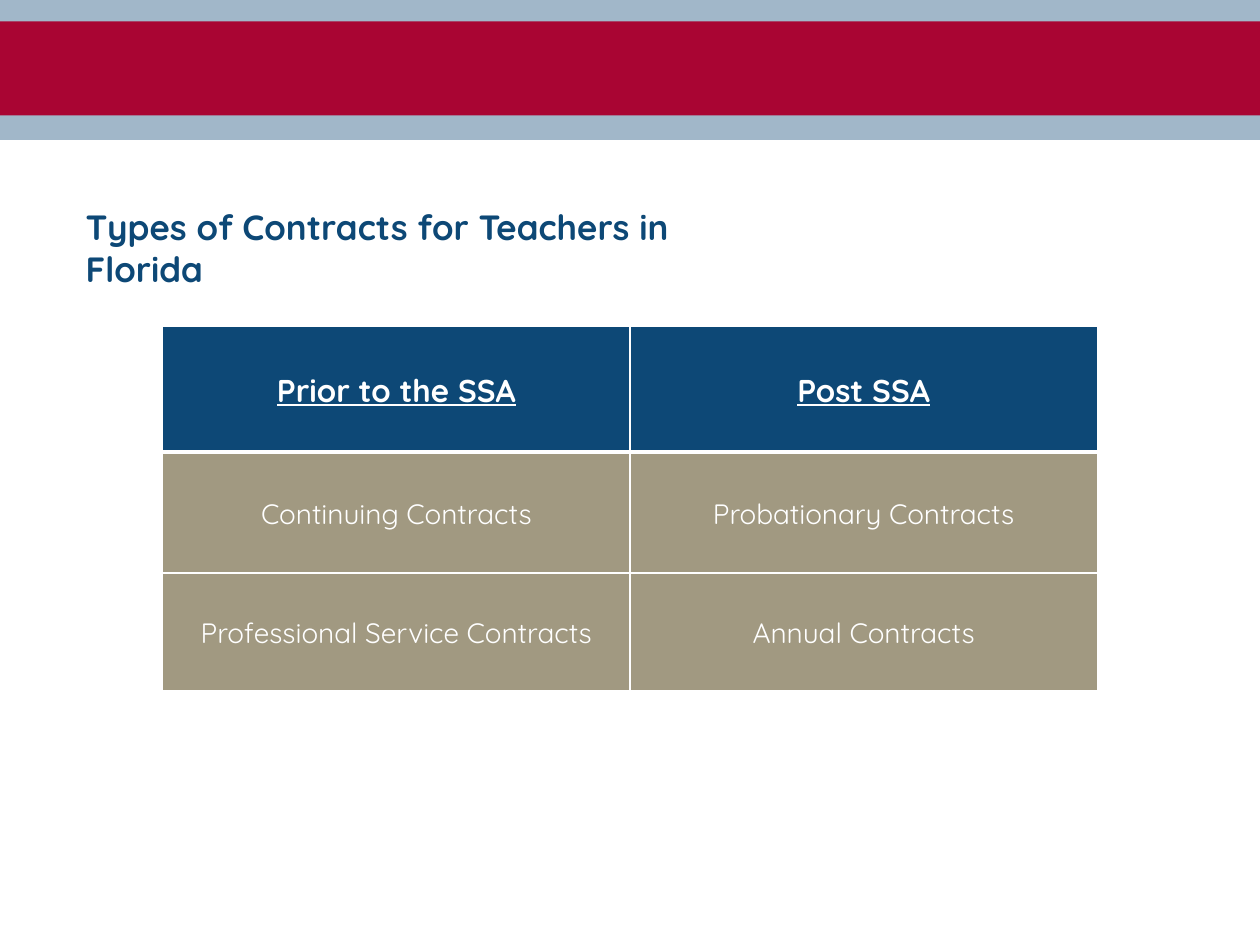
from dataclasses import dataclass

from lxml.etree import SubElement
from pptx import Presentation
from pptx.dml.color import RGBColor
from pptx.enum.shapes import MSO_SHAPE
from pptx.enum.text import MSO_ANCHOR, MSO_AUTO_SIZE, PP_ALIGN
from pptx.oxml.ns import qn
from pptx.util import Cm, Pt


@dataclass(frozen=True)
class Theme:
    font: str = "Quicksand"
    navy: str = "0D4876"
    red: str = "A90533"
    tan: str = "A19981"
    white: str = "FFFFFF"
    title: int = 20
    head: int = 18
    body: int = 16


@dataclass(frozen=True)
class Band:
    top: float
    height: float
    color: str
    alpha: int = 100


@dataclass(frozen=True)
class Row:
    height: float
    texts: tuple
    head: bool = False


THEME = Theme()
WIDTH, HEIGHT = 25.4, 19.05
BANDS = (Band(0, 2.82, THEME.navy, 39), Band(0.43, 1.9, THEME.red))
ROWS = (
    Row(2.54, ("Prior to the SSA", "Post SSA"), head=True),
    Row(2.44, ("Continuing Contracts", "Probationary Contracts")),
    Row(2.37, ("Professional Service Contracts", "Annual Contracts")),
)


def rgb(color: str) -> RGBColor:
    return RGBColor.from_string(color)


def style(font, color: str, size: int, **extra) -> None:
    font.color.rgb = rgb(color)
    form = {"name": THEME.font, "size": Pt(size), **extra}
    for key, value in form.items():
        setattr(font, key, value)


def draw_band(slide, band: Band) -> None:
    shape = slide.shapes.add_shape(
        MSO_SHAPE.RECTANGLE, 0, Cm(band.top), Cm(WIDTH), Cm(band.height))
    shape.shadow.inherit = False
    shape.line.fill.background()
    shape.fill.solid()
    shape.fill.fore_color.rgb = rgb(band.color)
    if band.alpha < 100:
        tint = shape.fill._xPr.find(qn("a:solidFill"))[0]
        SubElement(tint, qn("a:alpha"), val=str(band.alpha * 1000))


def draw_title(slide, text: str) -> None:
    title = slide.shapes.title
    place = {"left": 1.47, "top": 4.01, "width": 14.53, "height": 2.03}
    for key, value in place.items():
        setattr(title, key, Cm(value))
    frame = title.text_frame
    frame.text = text
    form = {"word_wrap": True, "auto_size": MSO_AUTO_SIZE.NONE,
            "vertical_anchor": MSO_ANCHOR.TOP}
    for key, value in form.items():
        setattr(frame, key, value)
    para = frame.paragraphs[0]
    para.alignment = PP_ALIGN.LEFT
    style(para.font, THEME.navy, THEME.title, bold=True)


def set_edge(cell, side: str, width: float) -> None:
    # Borders must come before the cell's fill
    props = cell._tc.get_or_add_tcPr()
    line = SubElement(props, qn(f"a:ln{side}"), w=str(Pt(width)))
    fill = SubElement(line, qn("a:solidFill"))
    SubElement(fill, qn("a:srgbClr"), val=THEME.white)


def draw_cell(cell, text: str, head: bool, edges: dict) -> None:
    for side, width in edges.items():
        set_edge(cell, side, width)
    cell.fill.solid()
    cell.fill.fore_color.rgb = rgb(THEME.navy if head else THEME.tan)
    cell.vertical_anchor = MSO_ANCHOR.MIDDLE
    cell.margin_top = Cm(0.18)
    cell.text = text
    para = cell.text_frame.paragraphs[0]
    para.alignment = PP_ALIGN.CENTER
    style(para.runs[0].font, THEME.white, THEME.head if head else THEME.body,
          bold=head, underline=head)


def draw_table(slide, rows: tuple) -> None:
    width = 18.84
    total = sum(row.height for row in rows)
    table = slide.shapes.add_table(
        len(rows), len(rows[0].texts), Cm((WIDTH - width) / 2), Cm(6.57),
        Cm(width), Cm(total)).table
    for i, row in enumerate(rows):
        table.rows[i].height = Cm(row.height)
        # The rule under the heading row is thicker
        above = 3 if i and rows[i - 1].head else 1
        edges = {"L": 1, "R": 1, "T": above, "B": 3 if row.head else 1}
        for j, text in enumerate(row.texts):
            draw_cell(table.cell(i, j), text, row.head, edges)


def main() -> None:
    deck = Presentation()
    deck.slide_width, deck.slide_height = Cm(WIDTH), Cm(HEIGHT)
    slide = deck.slides.add_slide(deck.slide_layouts[5])
    # Header bands
    for band in BANDS:
        draw_band(slide, band)
    # Title and contract table
    draw_title(slide, "Types of Contracts for Teachers in Florida")
    draw_table(slide, ROWS)
    deck.save("out.pptx")


if __name__ == "__main__":
    main()
